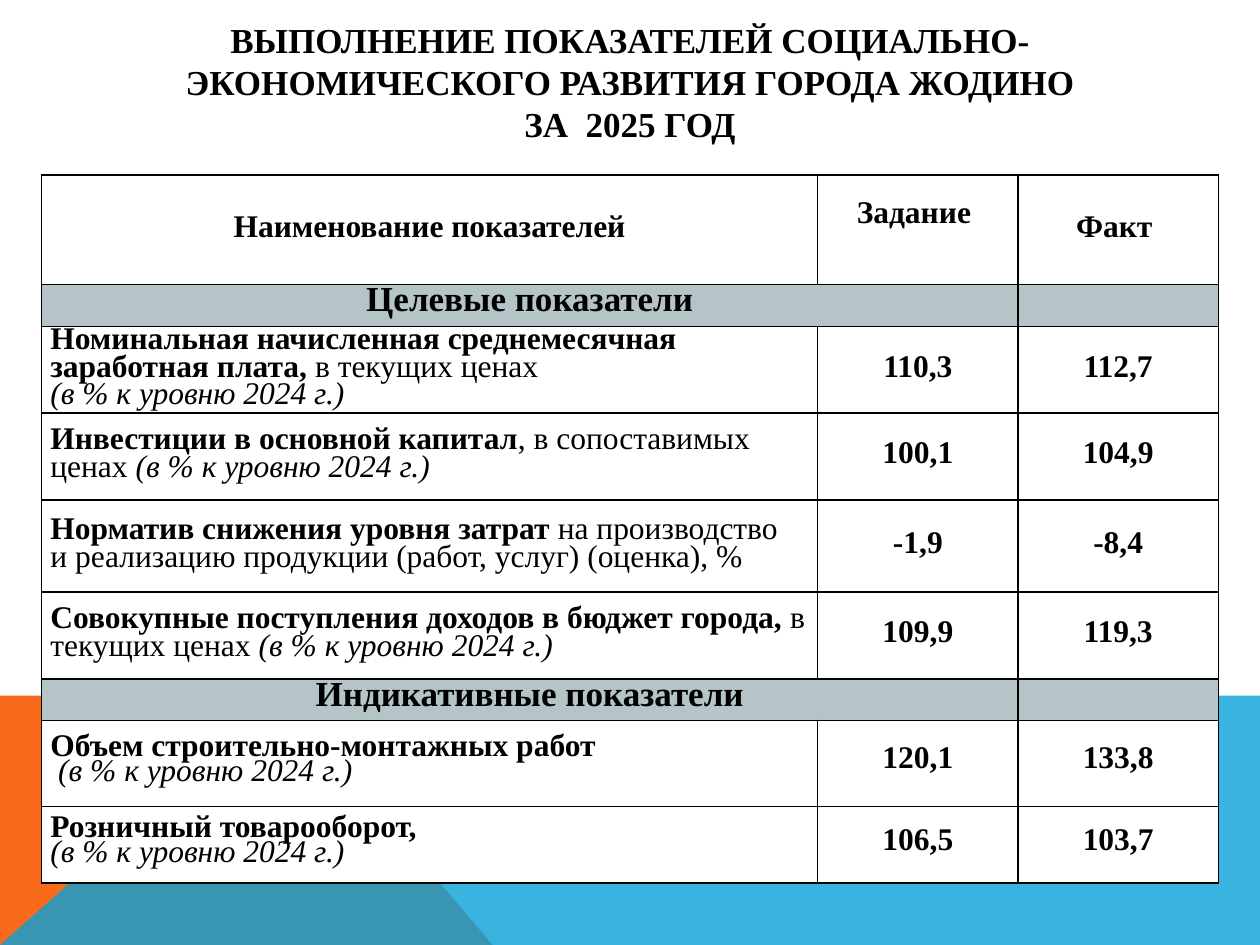
from dataclasses import dataclass

from lxml import etree
from pptx import Presentation
from pptx.dml.color import RGBColor as Color
from pptx.enum.shapes import MSO_SHAPE as Shape
from pptx.enum.text import MSO_ANCHOR as Anchor, PP_ALIGN as Align
from pptx.oxml.ns import qn
from pptx.util import Emu, Inches, Pt


@dataclass(frozen=True)
class Theme:
    font: str = "Times New Roman"
    ink: str = "000000"
    paper: str = "FFFFFF"
    band: str = "B5C4C7"
    orange: str = "F96A1B"
    blue: str = "08A1D9"
    heading_size: int = 20
    body_size: int = 18
    heading_leading: int = 24
    leading: int = 16
    tight_leading: int = 14


THEME = Theme()
WIDTH, HEIGHT = Inches(10), Inches(7.5)
HORIZON = 0.736  # top of the footer wedges, share of the height
VALLEY = 0.223   # where the wedges meet, share of the width

COLUMNS = (6.16, 1.59, 1.59)
LEVEL = "(в % к уровню 2024 г.)"

# Each row: height, line spacing, cells. A cell is a list of (text, style)
# spans, where style holds b for bold and i for italic.
HEADER = (0.87, THEME.leading, [
    [("Наименование показателей", "b")], [("Задание \n", "b")], [("Факт ", "b")]])


def indicator(height, spans, target, actual, leading=THEME.leading):
    return height, leading, [spans, [(target, "b")], [(actual, "b")]]


def section(name):
    return 0.33, THEME.leading, [[(name, "b")]]


ROWS = [
    HEADER,
    section("Целевые показатели"),
    indicator(0.69, [("Номинальная начисленная среднемесячная заработная плата,", "b"),
                     (" в текущих ценах \n", ""), (LEVEL, "i")], "110,3", "112,7"),
    indicator(0.69, [("Инвестиции в основной капитал", "b"),
                     (", в сопоставимых ценах ", ""), (LEVEL, "i")], "100,1", "104,9"),
    indicator(0.73, [("Норматив снижения уровня затрат ", "b"),
                     ("на производство\nи реализацию продукции (работ, услуг) (оценка), %", "")],
              "-1,9", "-8,4"),
    indicator(0.69, [("Совокупные поступления доходов в бюджет города,", "b"),
                     (" в текущих ценах ", ""), (LEVEL, "i")], "109,9", "119,3"),
    section("Индикативные показатели"),
    indicator(0.68, [("Объем строительно-монтажных работ\n ", "b"), (LEVEL, "i")],
              "120,1", "133,8", THEME.tight_leading),
    indicator(0.61, [("Розничный товарооборот,  \n", "b"), (LEVEL, "i")],
              "106,5", "103,7", THEME.tight_leading),
]


def paint(fill, color):
    fill.solid()
    fill.fore_color.rgb = Color.from_string(color)


def write(para, spans, size, leading, align):
    para.alignment = align
    para.line_spacing = Pt(leading)
    font = para.font
    font.name, font.size = THEME.font, Pt(size)
    font.color.rgb = Color.from_string(THEME.ink)
    styles = {style for _, style in spans}
    if len(styles) == 1:
        font.bold = "b" in spans[0][1]
    for text, style in spans:
        for number, line in enumerate(text.split("\n")):
            if number:
                para.add_line_break()
            if line:
                span = para.add_run()
                span.text = line
                if len(styles) > 1:
                    span.font.bold = "b" in style
                    span.font.italic = "i" in style


def add_wedge(page, points, color, opacity=100):
    corners = [(round(x * WIDTH), round(y * HEIGHT)) for x, y in points]
    builder = page.shapes.build_freeform(*corners[0])
    builder.add_line_segments(corners[1:], close=True)
    wedge = builder.convert_to_shape()
    wedge.shadow.inherit = False
    wedge.line.fill.background()
    paint(wedge.fill, color)
    if opacity < 100:
        tint = wedge.fill._xPr.find(qn("a:solidFill"))[0]
        etree.SubElement(tint, qn("a:alpha"), val=str(opacity * 1000))


def add_title(page, text):
    left, top, height = Inches(0.43), Inches(0.11), Inches(1.07)
    box = page.shapes.add_shape(Shape.RECTANGLE, left, top, WIDTH - 2 * left, height)
    box.shadow.inherit = False
    paint(box.fill, THEME.paper)
    paint(box.line.fill, THEME.paper)
    box.line.width = Pt(2)
    frame = box.text_frame
    frame.word_wrap = True
    frame.vertical_anchor = Anchor.BOTTOM
    frame.margin_left = frame.margin_right = Inches(0.06)
    frame.margin_top = frame.margin_bottom = Inches(0.03)
    write(frame.paragraphs[0], [(text, "b")], THEME.heading_size,
          THEME.heading_leading, Align.CENTER)


def style_cell(cell, color):
    cell.vertical_anchor = Anchor.MIDDLE
    cell.margin_left = cell.margin_right = Inches(0.07)
    cell.margin_top = cell.margin_bottom = Emu(0)
    properties = cell._tc.get_or_add_tcPr()
    for side in ("lnL", "lnR", "lnT", "lnB"):
        border = etree.SubElement(properties, qn(f"a:{side}"), w=str(Pt(1)))
        solid = etree.SubElement(border, qn("a:solidFill"))
        etree.SubElement(solid, qn("a:srgbClr"), val=THEME.ink)
    paint(cell.fill, color)


def add_indicator_table(page, rows):
    frame = page.shapes.add_table(
        len(rows), len(COLUMNS), Inches(0.33), Inches(1.39),
        Inches(sum(COLUMNS)), Inches(sum(row[0] for row in rows)))
    table = frame.table
    table.first_row = table.horz_banding = False
    for column, width in zip(table.columns, COLUMNS):
        column.width = Inches(width)
    for index, (height, leading, cells) in enumerate(rows):
        table.rows[index].height = Inches(height)
        is_section = len(cells) == 1
        for column in range(len(COLUMNS)):
            style_cell(table.cell(index, column), THEME.band if is_section else THEME.paper)
        if is_section:
            table.cell(index, 0).merge(table.cell(index, 1))
        size = THEME.heading_size if is_section else THEME.body_size
        for column, spans in enumerate(cells):
            is_name = column == 0 and not is_section and index > 0
            write(table.cell(index, column).text_frame.paragraphs[0], spans, size,
                  leading, Align.LEFT if is_name else Align.CENTER)


def main():
    deck = Presentation()
    deck.slide_width, deck.slide_height = WIDTH, HEIGHT
    page = deck.slides.add_slide(deck.slide_layouts[6])

    # Footer wedges
    add_wedge(page, [(0, 1), (0, HORIZON), (VALLEY, HORIZON), (0.391, 1)], THEME.orange)
    add_wedge(page, [(0, 1), (VALLEY, HORIZON), (1, HORIZON), (1, 1)], THEME.blue, 80)

    # Title and table
    add_title(page, "ВЫПОЛНЕНИЕ ПОКАЗАТЕЛЕЙ СОЦИАЛЬНО-ЭКОНОМИЧЕСКОГО "
                    "РАЗВИТИЯ ГОРОДА ЖОДИНО\nЗА  2025 ГОД")
    add_indicator_table(page, ROWS)

    deck.save("out.pptx")


if __name__ == "__main__":
    main()
